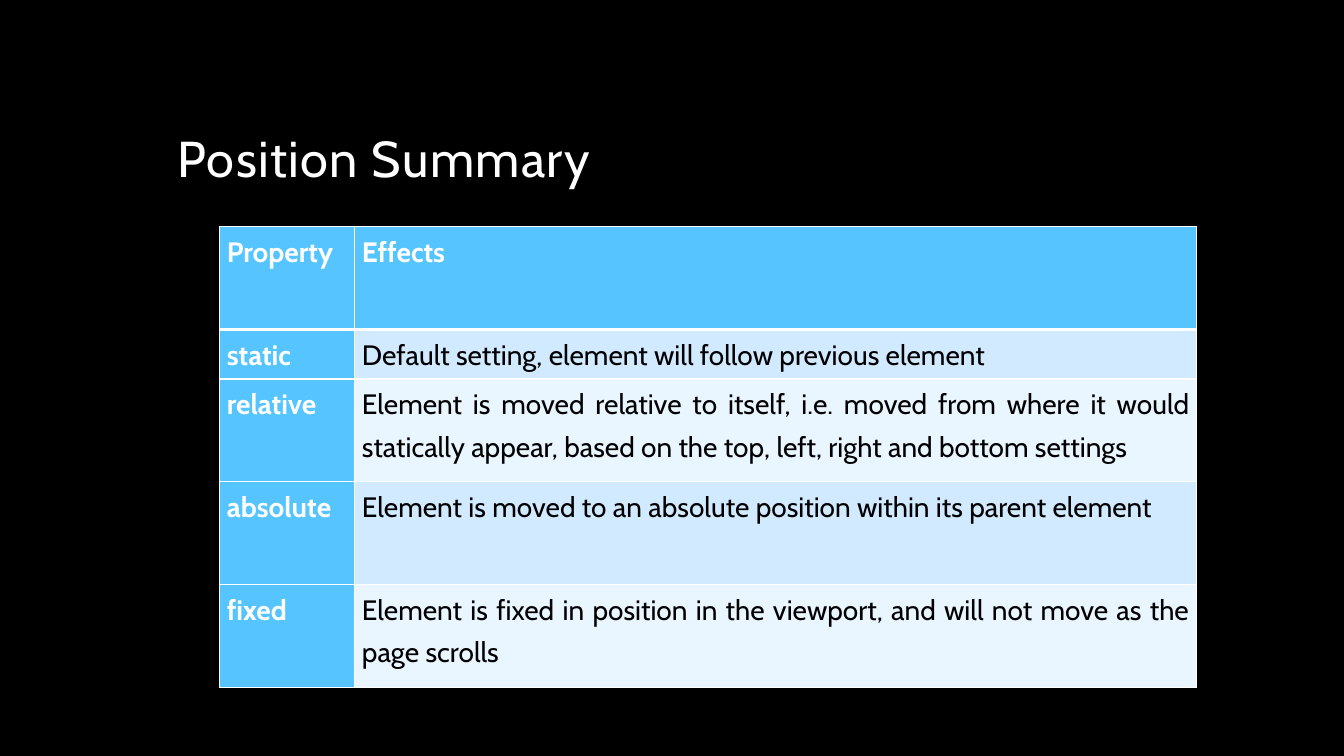
from lxml import etree
from pptx import Presentation
from pptx.dml.color import RGBColor
from pptx.enum.text import MSO_ANCHOR, MSO_AUTO_SIZE, PP_ALIGN
from pptx.oxml.ns import qn
from pptx.util import Inches, Pt

LEFT, JUSTIFY = PP_ALIGN.LEFT, PP_ALIGN.JUSTIFY
TOP, BOTTOM = MSO_ANCHOR.TOP, MSO_ANCHOR.BOTTOM
NO_AUTOFIT = MSO_AUTO_SIZE.NONE

FONT = "Cabin"
BLACK, WHITE, BLUE = "000000", "FFFFFF", "56C5FF"
BANDS = ["D1EAFF", "E9F5FF"]
COLUMN_WIDTHS = [1.34, 8.35]
ROW_HEIGHTS = [1.02, 0.49, 1.02, 1.02, 1.02]
ROWS = [
    ("Property", "Effects"),
    ("static", "Default setting, element will follow previous element"),
    ("relative", "Element is moved relative to itself, i.e. moved from where it would "
                 "statically appear, based on the top, left, right and bottom settings"),
    ("absolute", "Element is moved to an absolute position within its parent element"),
    ("fixed", "Element is fixed in position in the viewport, and will not move as the "
              "page scrolls"),
]


def color(value):
    return RGBColor.from_string(value)


def add_borders(cell, widths):
    """Put white lines, widths in points, ahead of the cell's fill."""
    properties = cell._tc.get_or_add_tcPr()
    for position, (side, width) in enumerate(widths.items()):
        line = etree.Element(qn(f"a:ln{side}"), w=str(Pt(width)))
        fill = etree.SubElement(line, qn("a:solidFill"))
        etree.SubElement(fill, qn("a:srgbClr"), val=WHITE)
        properties.insert(position, line)


# Slide
deck = Presentation()
deck.slide_width, deck.slide_height = Inches(13.33), Inches(7.5)
page = deck.slides.add_slide(deck.slide_layouts[5])
page.background.fill.solid()
page.background.fill.fore_color.rgb = color(BLACK)

# Title
title = page.shapes.title
title.left, title.top = Inches(1.66), Inches(0.42)
title.width, title.height = Inches(10), Inches(1.5)
frame = title.text_frame
frame.text = "Position Summary"
frame.word_wrap = True
frame.auto_size = NO_AUTOFIT
frame.vertical_anchor = BOTTOM
para = frame.paragraphs[0]
para.alignment = LEFT
para.line_spacing = 0.9
span = para.runs[0]
span.font.name, span.font.size = FONT, Pt(36)
span.font.color.rgb = color(WHITE)
span.font._element.set("spc", "100")

# Table grid
table = page.shapes.add_table(
    len(ROWS), len(COLUMN_WIDTHS), Inches(2.18), Inches(2.25),
    Inches(sum(COLUMN_WIDTHS)), Inches(sum(ROW_HEIGHTS))).table
for column, width in zip(table.columns, COLUMN_WIDTHS):
    column.width = Inches(width)
for row, height in zip(table.rows, ROW_HEIGHTS):
    row.height = Inches(height)

# Cells: blue header row and first column, banded descriptions
for r, texts in enumerate(ROWS):
    for c, text in enumerate(texts):
        heading = r == 0 or c == 0
        cell = table.cell(r, c)
        cell.margin_left = cell.margin_right = Inches(0.07)
        cell.margin_top = cell.margin_bottom = 0
        cell.vertical_anchor = TOP
        cell.fill.solid()
        cell.fill.fore_color.rgb = color(BLUE if heading else BANDS[(r - 1) % 2])
        add_borders(cell, {"L": 1, "R": 1, "T": 3 if r == 1 else 1, "B": 3 if r == 0 else 1})

        cell.text_frame.text = text
        para = cell.text_frame.paragraphs[0]
        para.alignment = JUSTIFY
        para.line_spacing = 1.25
        span = para.runs[0]
        span.font.name, span.font.size = FONT, Pt(20)
        span.font.bold = heading
        span.font.color.rgb = color(WHITE if heading else BLACK)

deck.save("out.pptx")
